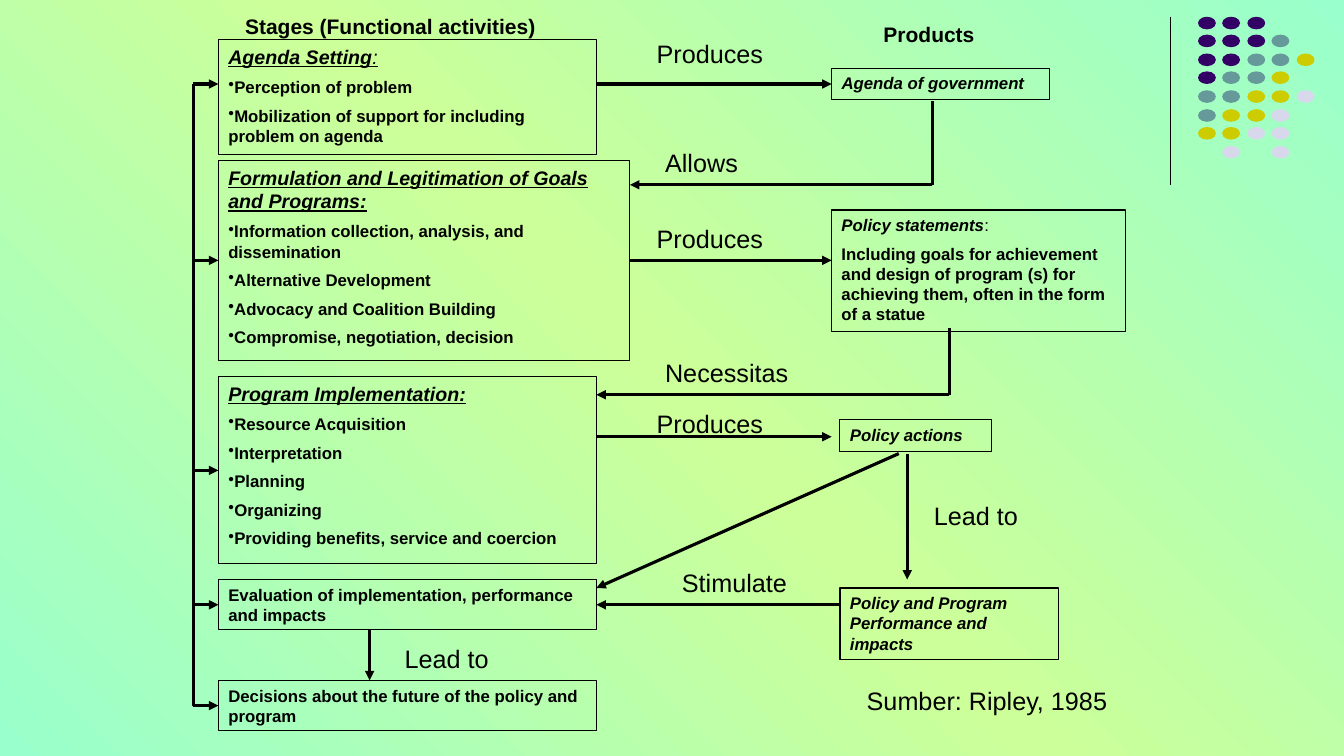
from copy import deepcopy

from lxml import etree
from pptx import Presentation
from pptx import util as u
from pptx.dml.color import RGBColor
from pptx.enum import shapes, text
from pptx.oxml.ns import qn

BLACK = RGBColor(0x00, 0x00, 0x00)
MINT = RGBColor(0x99, 0xFF, 0xCC)
LIME = RGBColor(0xCC, 0xFF, 0x99)
PURPLE = RGBColor(0x33, 0x00, 0x66)
TEAL = RGBColor(0x66, 0x99, 0x99)
OLIVE = RGBColor(0xCC, 0xCC, 0x00)
LILAC = RGBColor(0xD8, 0xD8, 0xEC)

PLAIN = {"size": u.Pt(12)}
BODY = {**PLAIN, "bold": True}
PRODUCT = {**BODY, "italic": True}
STAGE_COLON = {"size": u.Pt(14), "italic": True, "underline": True}
STAGE = {**STAGE_COLON, "bold": True}
HEADER = {"size": u.Pt(15), "bold": True}
LABEL = {"size": u.Pt(18)}

TOP, LEFT, BOTTOM, RIGHT = range(4)
DOT_COLOURS = {"P": PURPLE, "T": TEAL, "Y": OLIVE, "L": LILAC}
DOT_ROWS = ["PPP", "PPPT", "PPTTY", "PTTY", "TTYYL", "TYYL", "YYLL", "-L-L"]


class PolicyBoard:
    """Draws the policy process diagram on one slide, measured in px."""

    PX = 9525
    FONT = "Arial"

    def __init__(self, width, height):
        self.presentation = Presentation()
        self.presentation.slide_width = self.px(width)
        self.presentation.slide_height = self.px(height)
        self.slide = self.presentation.slides.add_slide(self.presentation.slide_layouts[6])

    def px(self, *lengths):
        scaled = [u.Emu(length * self.PX) for length in lengths]
        return scaled if len(scaled) > 1 else scaled[0]

    def background(self, colours, angle):
        fill = self.slide.background.fill
        fill.gradient()
        fill.gradient_angle = angle
        stop_list = next(self.slide.element.iter(qn("a:gsLst")))
        while len(stop_list) < len(colours):
            stop_list.append(deepcopy(stop_list[0]))
        for index, (stop, colour) in enumerate(zip(fill.gradient_stops, colours)):
            stop.position = index / (len(colours) - 1)
            stop.color.rgb = colour

    def paragraph(self, frame, runs, bulleted=False):
        first = not frame.paragraphs[0].runs
        paragraph = frame.paragraphs[0] if first else frame.add_paragraph()
        paragraph.alignment = text.PP_ALIGN.LEFT
        if not first:
            paragraph.space_before = u.Pt(6)
        if bulleted:
            properties = paragraph._p.get_or_add_pPr()
            properties.set("marL", "0")
            properties.set("indent", "0")
            etree.SubElement(properties, qn("a:buChar"), char="•")
        for words, style in runs:
            run = paragraph.add_run()
            run.text = words
            run.font.color.rgb = BLACK
            for name, value in {"name": self.FONT, **style}.items():
                setattr(run.font, name, value)

    def frame(self, shape):
        settings = {
            "word_wrap": True,
            "auto_size": text.MSO_AUTO_SIZE.SHAPE_TO_FIT_TEXT,
            "vertical_anchor": text.MSO_ANCHOR.TOP,
        }
        for name, value in settings.items():
            setattr(shape.text_frame, name, value)
        return shape.text_frame

    def box(self, area, heading, points=(), bulleted=True):
        shape = self.slide.shapes.add_shape(shapes.MSO_SHAPE.RECTANGLE, *self.px(*area))
        shape.shadow.inherit = False
        shape.fill.background()
        shape.line.color.rgb = BLACK
        shape.line.width = u.Pt(0.75)
        frame = self.frame(shape)
        self.paragraph(frame, heading)
        for point in points:
            self.paragraph(frame, [(point, BODY)], bulleted)
        return shape

    def label(self, left, top, width, words, style=LABEL, height=38):
        shape = self.slide.shapes.add_textbox(*self.px(left, top, width, height))
        self.paragraph(self.frame(shape), [(words, style)])

    def line(self, ends, weight=2.25, arrow=True, begin=None, end=None):
        connector = self.slide.shapes.add_connector(
            shapes.MSO_CONNECTOR.STRAIGHT, *self.px(*ends))
        connector.line.color.rgb = BLACK
        connector.line.width = u.Pt(weight)
        properties = connector.element.spPr
        if arrow:
            etree.SubElement(properties.find(qn("a:ln")), qn("a:tailEnd"), type="triangle")
        etree.SubElement(properties, qn("a:effectLst"))
        if begin:
            connector.begin_connect(*begin)
        if end:
            connector.end_connect(*end)

    def dot(self, left, top, colour):
        shape = self.slide.shapes.add_shape(
            shapes.MSO_SHAPE.OVAL, *self.px(left, top, 17, 12))
        shape.shadow.inherit = False
        shape.fill.solid()
        shape.fill.fore_color.rgb = colour
        shape.line.fill.background()


def main():
    board = PolicyBoard(1280, 720)
    board.background([MINT, LIME, MINT], 45)

    board.line((1115, 16, 1115, 176), weight=0.75, arrow=False)
    for row, codes in enumerate(DOT_ROWS):
        for column, code in enumerate(codes):
            if code in DOT_COLOURS:
                board.dot(1141 + column * 47 // 2, 16 + row * 88 // 5, DOT_COLOURS[code])

    board.box((208, 38, 360, 109), [("Agenda Setting", STAGE), (":", STAGE_COLON)], [
        "Perception of problem",
        "Mobilization of support for including problem on agenda"])
    formulation = board.box(
        (208, 153, 392, 190),
        [("Formulation and Legitimation of Goals and Programs:", STAGE)], [
            "Information collection, analysis, and dissemination",
            "Alternative Development",
            "Advocacy and Coalition Building",
            "Compromise, negotiation, decision"])
    implementation = board.box(
        (208, 359, 360, 178), [("Program Implementation:", STAGE)], [
            "Resource Acquisition", "Interpretation", "Planning", "Organizing",
            "Providing benefits, service and coercion"])
    evaluation = board.box(
        (208, 552, 360, 48),
        [("Evaluation of implementation, performance and impacts", BODY)])
    decisions = board.box(
        (208, 648, 360, 48),
        [("Decisions about the future of the policy and program", BODY)])

    agenda = board.box((792, 65, 208, 30), [("Agenda of government", PRODUCT)])
    board.box((792, 200, 280, 116), [("Policy statements", PRODUCT), (":", PLAIN)], [
        "Including goals for achievement and design of program (s) for achieving them, "
        "often in the form of a statue"], bulleted=False)
    board.box((800, 400, 144, 30), [("Policy actions", PRODUCT)])
    board.box((800, 560, 208, 68), [("Policy and Program Performance and impacts", PRODUCT)])

    board.line((184, 80, 184, 672), arrow=False)
    board.line((184, 80, 208, 80))
    for stage, y in [(formulation, 248), (implementation, 448),
                     (evaluation, 576), (decisions, 672)]:
        board.line((184, y, 208, y), end=(stage, LEFT))

    board.line((568, 80, 792, 80), end=(agenda, LEFT))
    board.line((600, 248, 792, 248), begin=(formulation, RIGHT))
    board.line((568, 416, 792, 416))
    board.line((800, 576, 568, 576), end=(evaluation, RIGHT))
    for x, top, y, target in [(888, 96, 176, 600), (904, 312, 376, 568)]:
        board.line((x, top, x, y), arrow=False)
        board.line((x, y, target, y))
    board.line((864, 432, 864, 552))
    board.line((352, 600, 352, 648))
    board.line((856, 432, 568, 560))

    board.label(224, 8, 296, "Stages (Functional activities)", HEADER, 34)
    board.label(832, 16, 120, "Products", HEADER, 34)
    for top in (32, 208, 384):
        board.label(616, top, 152, "Produces")
    board.label(624, 136, 168, "Allows")
    board.label(624, 336, 200, "Necessitas")
    board.label(640, 536, 168, "Stimulate")
    board.label(880, 472, 112, "Lead to")
    board.label(376, 608, 200, "Lead to")
    board.label(816, 648, 256, "Sumber: Ripley, 1985")

    board.presentation.save("out.pptx")


if __name__ == "__main__":
    main()
